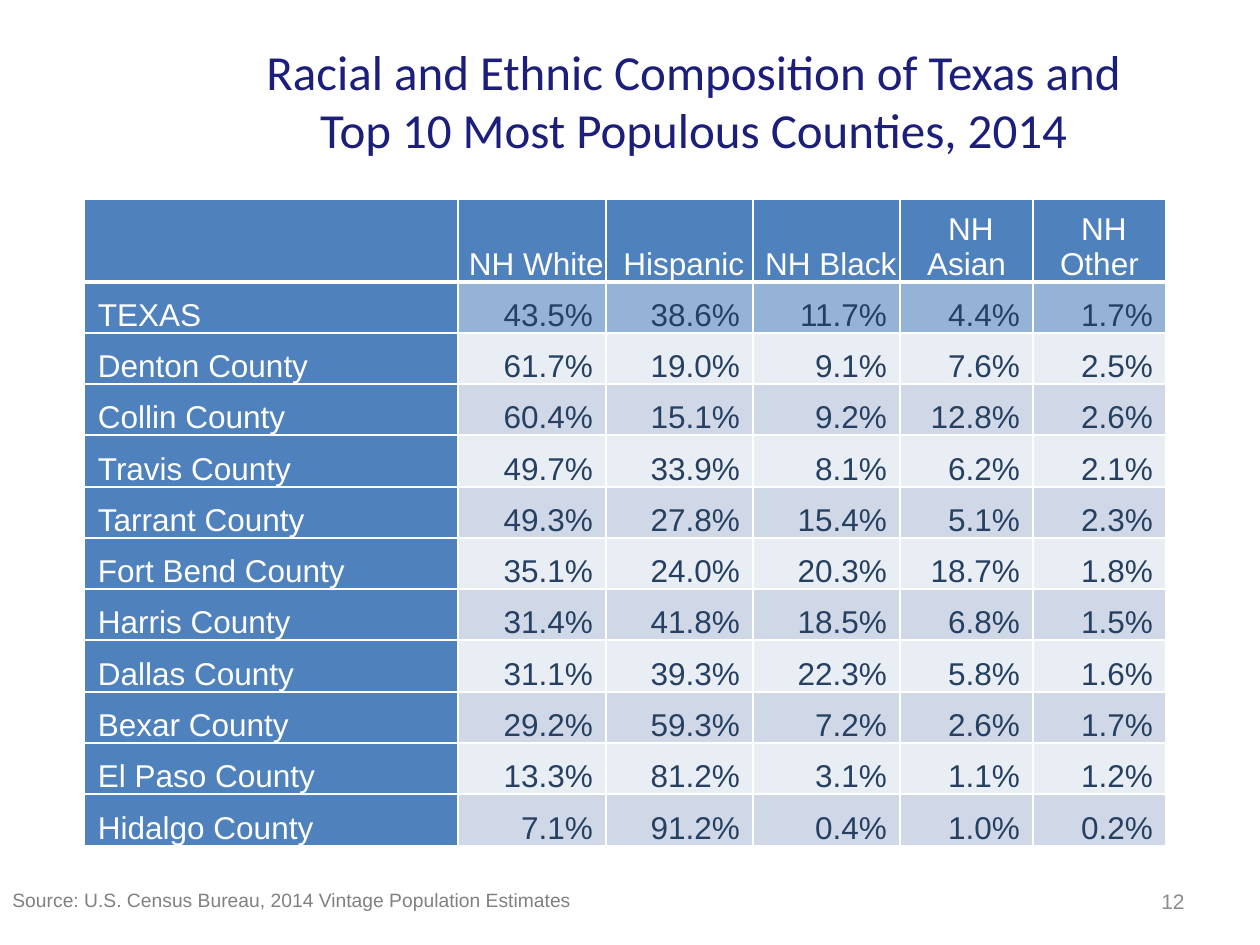
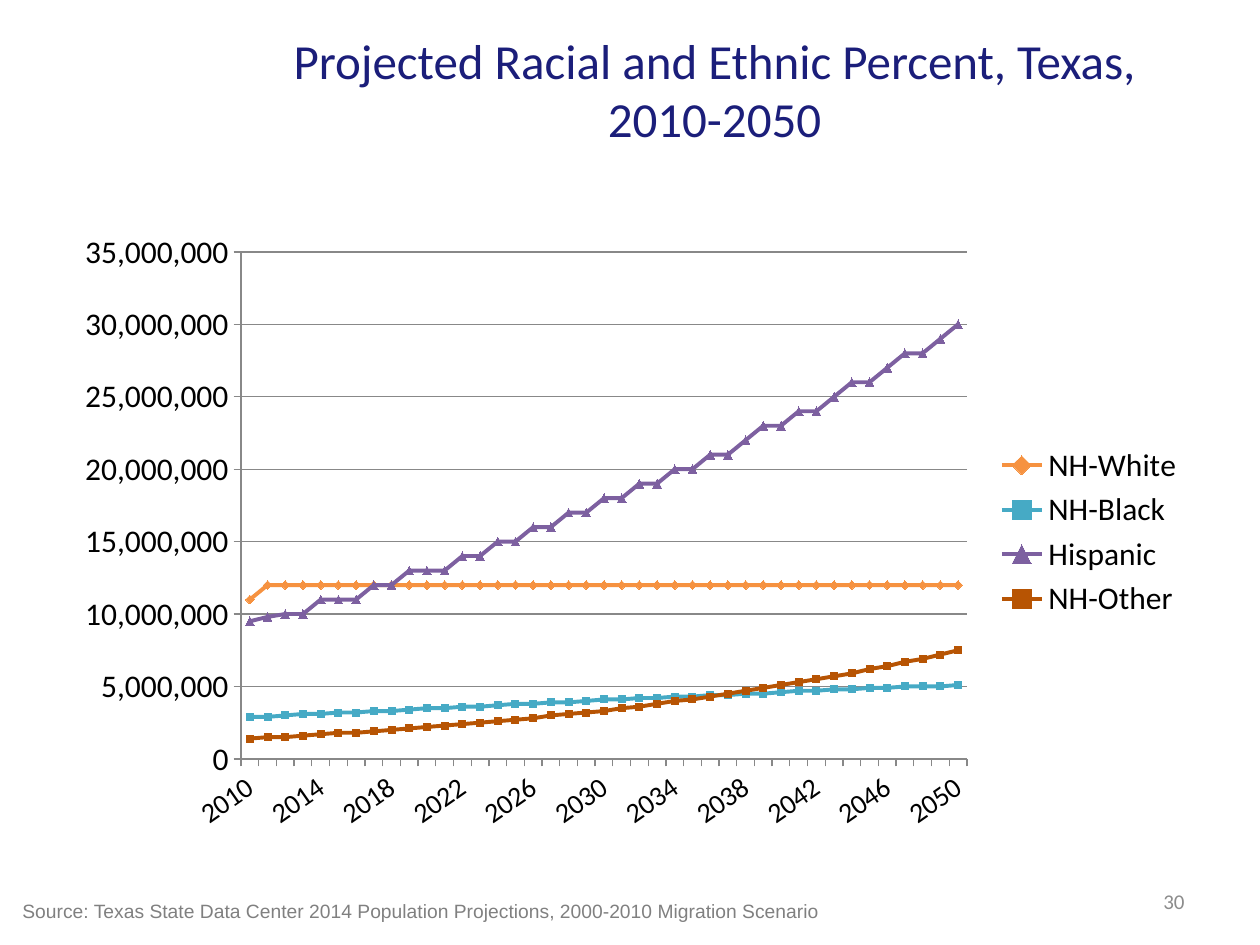
"""Build two slides on the racial and ethnic make-up of Texas: a table and a line chart."""
from lxml.etree import SubElement
from pptx import Presentation
from pptx.chart.data import CategoryChartData
from pptx.dml.color import RGBColor
from pptx.enum.chart import XL_CHART_TYPE, XL_LEGEND_POSITION, XL_MARKER_STYLE, XL_TICK_MARK
from pptx.enum.text import MSO_ANCHOR, PP_ALIGN
from pptx.oxml import parse_xml
from pptx.oxml.ns import nsdecls, qn
from pptx.util import Pt

PX = 914400 / 126
COLORS = {
    "title": "1B1E7A", "source": "808080", "page": "8C8C8C",
    "head": "4F81BD", "state": "95B3D7", "light": "E9EDF4", "dark": "D0D8E8",
    "value": "254061", "white": "FFFFFF", "black": "000000", "axis": "888888",
}
FONTS = {
    "title": {"name": "Calibri", "size": Pt(28)},
    "source": {"name": "Arial", "size": Pt(11)},
    "cell": {"name": "Arial", "size": Pt(18)},
    "chart": {"name": "Calibri", "size": Pt(18)},
    "years": {"name": "Calibri", "size": Pt(16)},
}
HEADS = ["", " NH White", " Hispanic", " NH Black", " NH Asian", " NH Other"]
SHARES = [
    ("TEXAS", 43.5, 38.6, 11.7, 4.4, 1.7),
    ("Denton County", 61.7, 19.0, 9.1, 7.6, 2.5),
    ("Collin County", 60.4, 15.1, 9.2, 12.8, 2.6),
    ("Travis County", 49.7, 33.9, 8.1, 6.2, 2.1),
    ("Tarrant County", 49.3, 27.8, 15.4, 5.1, 2.3),
    ("Fort Bend County", 35.1, 24.0, 20.3, 18.7, 1.8),
    ("Harris County", 31.4, 41.8, 18.5, 6.8, 1.5),
    ("Dallas County", 31.1, 39.3, 22.3, 5.8, 1.6),
    ("Bexar County", 29.2, 59.3, 7.2, 2.6, 1.7),
    ("El Paso County", 13.3, 81.2, 3.1, 1.1, 1.2),
    ("Hidalgo County", 7.1, 91.2, 0.4, 1.0, 0.2),
]
WIDTHS = [374, 148, 147, 147, 133, 133]
HEAD_H, BODY_H = 83, 564
CHART_W, CHART_H = 1134, 624
UNIT = 100000
GROUPS = [
    ("NH-White", "F69240", "F79646", XL_MARKER_STYLE.DIAMOND, 5,
     [114, 115, 115, 116, 116, 117, 117, 118, 118, 119, 119, 120, 120, 120,
      121, 121, 121, 121, 122, 122, 122, 122, 122, 122, 122, 122, 122, 122,
      122, 122, 121, 121, 121, 121, 121, 121, 120, 120, 120, 120, 120]),
    ("NH-Black", "46AAC5", "4BACC6", XL_MARKER_STYLE.SQUARE, 4,
     [29, 29, 30, 31, 31, 32, 32, 33, 33, 34, 35, 35, 36, 36,
      37, 38, 38, 39, 39, 40, 41, 41, 42, 42, 43, 43, 44, 44,
      45, 45, 46, 47, 47, 48, 48, 49, 49, 50, 50, 50, 51]),
    ("Hispanic", "7D60A0", "8064A2", XL_MARKER_STYLE.TRIANGLE, 5,
     [95, 98, 101, 104, 107, 111, 114, 118, 122, 126, 130, 134, 138, 142,
      147, 151, 156, 161, 166, 171, 176, 181, 186, 192, 197, 202, 208, 214,
      220, 226, 232, 238, 244, 250, 257, 263, 270, 277, 284, 291, 299]),
    ("NH-Other", "B75403", "B65708", XL_MARKER_STYLE.SQUARE, 4,
     [14, 15, 15, 16, 17, 18, 18, 19, 20, 21, 22, 23, 24, 25,
      26, 27, 28, 30, 31, 32, 33, 35, 36, 38, 40, 41, 43, 45,
      47, 49, 51, 53, 55, 57, 59, 62, 64, 67, 69, 72, 75]),
]


def px(*nums):
    """Turn whole px into a list of EMU lengths."""
    return [round(num * PX) for num in nums]


def rgb(key):
    """Give the colour for a key of COLORS or for a hex string."""
    return RGBColor.from_string(COLORS.get(key, key))


def assign(item, values):
    """Set each attribute named in a dict."""
    for name, value in values.items():
        setattr(item, name, value)


def style(font, kind, color):
    """Give a font its face, size and colour."""
    assign(font, FONTS[kind])
    font.color.rgb = rgb(color)


def stroke(line, color, width):
    """Give a line its colour and width in points."""
    line.color.rgb = rgb(color)
    line.width = Pt(width)


def label(slide, text, box, font, color, align=PP_ALIGN.LEFT, anchor=MSO_ANCHOR.TOP):
    """Add a wrapped text box with one paragraph."""
    frame = slide.shapes.add_textbox(*px(*box)).text_frame
    assign(frame, {"word_wrap": True, "vertical_anchor": anchor})
    para = frame.paragraphs[0]
    assign(para, {"text": text, "alignment": align})
    style(para.font, font, color)


def title(slide, text, box):
    """Add the slide title."""
    label(slide, text, box, "title", "title", PP_ALIGN.CENTER, MSO_ANCHOR.MIDDLE)


def footer(slide, source, box, page, face):
    """Add the source note and the page number."""
    label(slide, source, box, "source", "source")
    FONTS["page"] = {"name": face, "size": Pt(12)}
    label(slide, page, (903, 876, 294, 50), "page", "page", PP_ALIGN.RIGHT, MSO_ANCHOR.MIDDLE)


def border(cell, top, bottom):
    """Draw white cell borders, 1 pt at the sides."""
    props = cell._tc.get_or_add_tcPr()
    for side, width in {"L": 1, "R": 1, "T": top, "B": bottom}.items():
        edge = SubElement(props, qn(f"a:ln{side}"), w=str(Pt(width)))
        fill = SubElement(edge, qn("a:solidFill"))
        SubElement(fill, qn("a:srgbClr"), val=COLORS["white"])


def shade(row, col):
    """Choose the fill of a table cell."""
    if row == 0 or col == 0:
        return "head"
    if row == 1:
        return "state"
    return "dark" if row % 2 else "light"


def fill_cell(cell, row, col, value):
    """Write and format one table cell."""
    if row == 0:
        align, left, right = PP_ALIGN.CENTER, 1, 1
    elif col == 0:
        align, left, right = PP_ALIGN.LEFT, 14, 1
    else:
        align, left, right = PP_ALIGN.RIGHT, 1, 13
    sides = ("margin_left", "margin_top", "margin_right", "margin_bottom")
    assign(cell, dict(zip(sides, px(left, 1, right, 0))))
    cell.vertical_anchor = MSO_ANCHOR.BOTTOM
    border(cell, 3 if row == 1 else 1, 3 if row == 0 else 1)
    cell.fill.solid()
    cell.fill.fore_color.rgb = rgb(shade(row, col))
    para = cell.text_frame.paragraphs[0]
    text = value if isinstance(value, str) else f"{value:.1f}%"
    assign(para, {"text": text, "alignment": align})
    style(para.font, "cell", "white" if row == 0 or col == 0 else "value")


def share_table(slide):
    """Add the table of county shares."""
    count = len(SHARES)
    box = px(84, 199, sum(WIDTHS), HEAD_H + BODY_H)
    table = slide.shapes.add_table(count + 1, len(HEADS), *box).table
    assign(table, {"first_row": False, "horz_banding": False})
    for col, width in zip(table.columns, px(*WIDTHS)):
        col.width = width
    steps = [BODY_H * num // count for num in range(count + 1)]
    highs = [HEAD_H] + [low - top for top, low in zip(steps, steps[1:])]
    for row, high in zip(table.rows, px(*highs)):
        row.height = high
    for row, values in enumerate([HEADS, *SHARES]):
        for col, value in enumerate(values):
            fill_cell(table.cell(row, col), row, col, value)


def layout(chart, left, top, width, height):
    """Place the inner plot area, in px from the corner of the chart."""
    area = chart._chartSpace.chart.plotArea
    for old in area.findall(qn("c:layout")):
        area.remove(old)
    parts = {"x": left / CHART_W, "y": top / CHART_H, "w": width / CHART_W, "h": height / CHART_H}
    inner = "".join(f'<c:{key} val="{part:.4f}"/>' for key, part in parts.items())
    area.insert(0, parse_xml(
        f'<c:layout {nsdecls("c")}><c:manualLayout><c:layoutTarget val="inner"/>'
        f'<c:xMode val="edge"/><c:yMode val="edge"/>{inner}</c:manualLayout></c:layout>'))


def year_axis(axis):
    """Slant the year labels and show every fourth one."""
    style(axis.tick_labels.font, "years", "black")
    node = axis._element
    body = node.find(f'{qn("c:txPr")}/{qn("a:bodyPr")}')
    for name, value in {"rot": "-2100000", "vert": "horz"}.items():
        body.set(name, value)
    skip = parse_xml(f'<c:tickLblSkip {nsdecls("c")} val="4"/>')
    node.find(qn("c:noMultiLvlLbl")).addprevious(skip)


def count_axis(axis):
    """Scale the people axis and draw its grid."""
    assign(axis, {"minimum_scale": 0, "maximum_scale": 350 * UNIT,
                  "major_unit": 50 * UNIT, "has_major_gridlines": True})
    stroke(axis.major_gridlines.format.line, "axis", 0.75)
    assign(axis.tick_labels, {"number_format": "#,##0", "number_format_is_linked": False})
    style(axis.tick_labels.font, "chart", "black")


def people(num):
    """Turn a count of units into people, to two leading digits."""
    return (num if num < 100 else round(num, -1)) * UNIT


def growth_chart(slide):
    """Add the line chart of projected people by group."""
    data = CategoryChartData(number_format="#,##0")
    data.categories = [str(year) for year in range(2010, 2051)]
    for name, *_, counts in GROUPS:
        data.add_series(name, [people(num) for num in counts])
    box = px(63, 220, CHART_W, CHART_H)
    chart = slide.shapes.add_chart(XL_CHART_TYPE.LINE_MARKERS, *box, data).chart
    assign(chart, {"has_title": False, "has_legend": True})
    style(chart.font, "chart", "black")
    assign(chart.legend, {"position": XL_LEGEND_POSITION.RIGHT, "include_in_layout": False})
    style(chart.legend.font, "chart", "black")
    for axis in (chart.category_axis, chart.value_axis):
        assign(axis, {"major_tick_mark": XL_TICK_MARK.OUTSIDE,
                      "minor_tick_mark": XL_TICK_MARK.NONE})
        stroke(axis.format.line, "axis", 0.75)
    year_axis(chart.category_axis)
    count_axis(chart.value_axis)
    plot = chart.plots[0]
    plot.vary_by_categories = False
    for series, (_, color, dot, shape, size, _) in zip(plot.series, GROUPS):
        series.smooth = False
        stroke(series.format.line, color, 2.25)
        mark = series.marker
        assign(mark, {"style": shape, "size": size})
        mark.format.fill.solid()
        mark.format.fill.fore_color.rgb = rgb(dot)
        stroke(mark.format.line, color, 0.75)
    layout(chart, 178, 32, 726, 507)


def main():
    """Build both slides and save the file."""
    deck = Presentation()
    assign(deck, dict(zip(("slide_width", "slide_height"), px(1260, 945))))
    blank = deck.slide_layouts[6]

    slide = deck.slides.add_slide(blank)
    title(slide, "Racial and Ethnic Composition of Texas and Top 10 Most Populous Counties, 2014",
          (221, 32, 945, 136))
    share_table(slide)
    footer(slide, "Source: U.S. Census Bureau, 2014 Vintage Population Estimates",
           (0, 882, 1102, 36), "12", "Arial")

    slide = deck.slides.add_slide(blank)
    title(slide, "Projected Racial and Ethnic Percent, Texas, 2010-2050", (221, 21, 987, 136))
    growth_chart(slide)
    footer(slide, "Source: Texas State Data Center 2014 Population Projections, "
           "2000-2010 Migration Scenario", (10, 893, 1207, 36), "30", "Calibri")
    deck.save("out.pptx")


if __name__ == "__main__":
    main()
